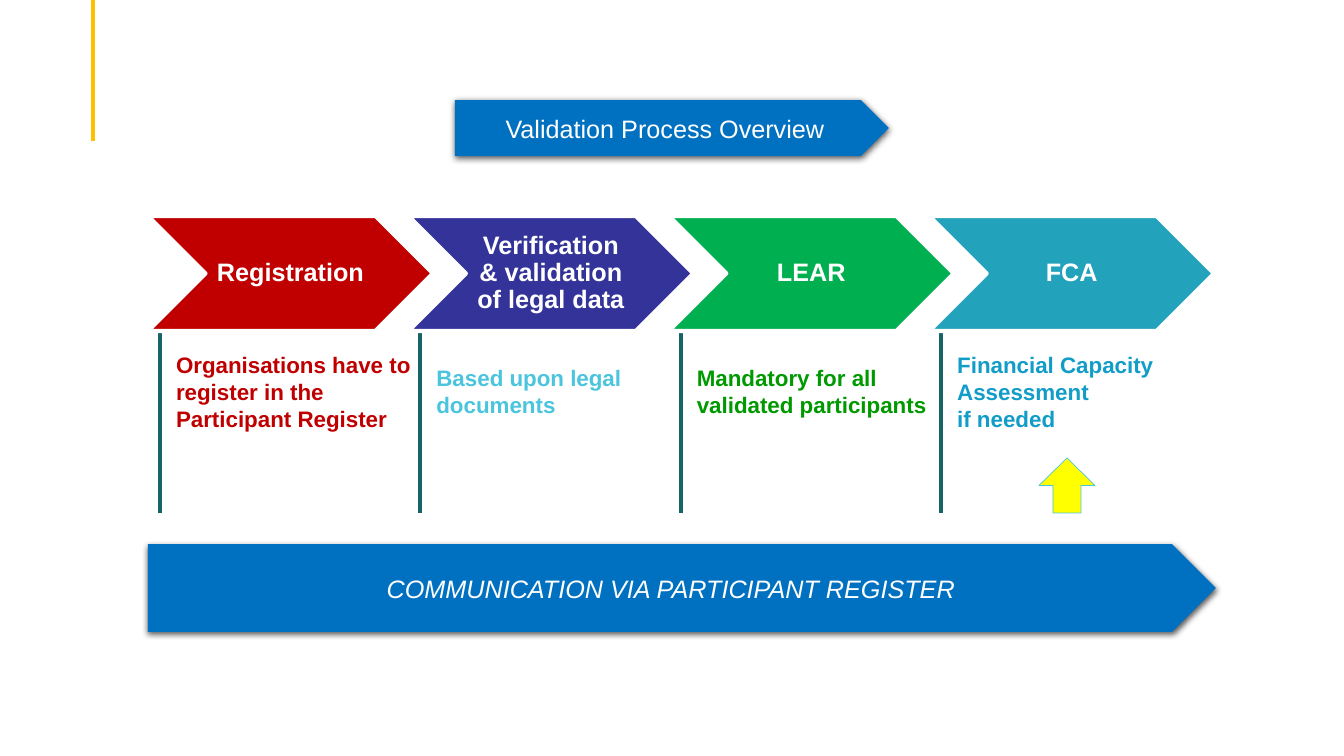
from lxml.etree import SubElement
from pptx import Presentation
from pptx.dml.color import RGBColor
from pptx.enum.shapes import MSO_CONNECTOR, MSO_SHAPE
from pptx.enum.text import MSO_ANCHOR, MSO_AUTO_SIZE, PP_ALIGN
from pptx.oxml.ns import qn
from pptx.util import Pt

COLORS = {
    "white": "FFFFFF", "gold": "FFC000", "rule": "176468", "bar": "0070C0",
    "red": "C00000", "indigo": "333399", "green": "00B050", "teal": "23A2BC",
    "sky": "4BC5DE", "leaf": "009900", "azure": "129DC8", "yellow": "FFFF00",
    "shadow": "000000",
}
STEPS = [
    ("Registration", "red", "Organisations have to register in the Participant Register", "red", 3),
    ("Verification & validation of legal data", "indigo", "Based upon legal documents", "sky", 2),
    ("LEAR", "green", "Mandatory for all validated participants", "leaf", 2),
    ("FCA", "teal", "Financial Capacity Assessment\vif needed", "azure", 3),
]
BARS = [
    ("COMMUNICATION VIA PARTICIPANT REGISTER", (148, 544, 1068, 88), {"italic": True}),
    ("Validation Process Overview", (455, 100, 434, 56), {}),
]
STEP_LEFT, STEP_PITCH, STEP_TOP, STEP_WIDTH, STEP_HEIGHT = 148, 260.4, 216, 285, 115
RULE_OFFSET, RULE_TOP, RULE_BOTTOM = 12, 331, 513
NOTE_MIDDLE, NOTE_WIDTH, NOTE_LINE, NOTE_PADDING = 392, 251, 27, 11


def px(value):
    return round(value * 914400 / 100.8)


def color(name):
    return RGBColor.from_string(COLORS[name])


def set_all(target, values):
    for name, value in values.items():
        setattr(target, name, value)


def write(shape, text, font_color, size, frame_format, paragraph_format, font_format):
    frame = shape.text_frame
    set_all(frame, {"word_wrap": True, **frame_format})
    paragraph = frame.paragraphs[0]
    paragraph.text = text
    set_all(paragraph, paragraph_format)
    for run in paragraph.runs:
        set_all(run.font, {"name": "Arial", "size": Pt(size), **font_format})
        run.font.color.rgb = color(font_color)


def add_rule(slide, x, top, bottom, line_color, width):
    rule = slide.shapes.add_connector(MSO_CONNECTOR.STRAIGHT, px(x), px(top), px(x), px(bottom))
    rule.line.color.rgb = color(line_color)
    rule.line.width = Pt(width)
    SubElement(rule._element.spPr, qn("a:effectLst"))


def add_block(slide, kind, box, fill, line=None, width=0):
    shape = slide.shapes.add_shape(kind, *map(px, box))
    shape.shadow.inherit = False
    shape.fill.solid()
    shape.fill.fore_color.rgb = color(fill)
    if line:
        shape.line.color.rgb = color(line)
        shape.line.width = Pt(width)
    else:
        shape.line.fill.background()
    return shape


def add_shadow(shape):
    effects = shape._element.spPr.find(qn("a:effectLst"))
    shadow = SubElement(effects, qn("a:outerShdw"), blurRad=str(Pt(4.5)), dist=str(Pt(1.5)),
                        dir="5400000", algn="t", rotWithShape="0")
    tint = SubElement(shadow, qn("a:srgbClr"), val=COLORS["shadow"])
    SubElement(tint, qn("a:alpha"), val="63000")


def add_note(slide, x, text, font_color, lines):
    height = lines * NOTE_LINE + NOTE_PADDING
    box = (x, NOTE_MIDDLE - height / 2, NOTE_WIDTH, height)
    note = slide.shapes.add_textbox(*map(px, box))
    write(note, text, font_color, 16,
          {"margin_left": px(16), "margin_right": 0, "auto_size": MSO_AUTO_SIZE.SHAPE_TO_FIT_TEXT},
          {"alignment": PP_ALIGN.LEFT}, {"bold": True})


def main():
    presentation = Presentation()
    set_all(presentation, {"slide_width": px(1344), "slide_height": px(756)})
    slide = presentation.slides.add_slide(presentation.slide_layouts[6])
    middle = {"vertical_anchor": MSO_ANCHOR.MIDDLE}
    centered = {"alignment": PP_ALIGN.CENTER}
    lefts = [STEP_LEFT + STEP_PITCH * index for index in range(len(STEPS))]

    add_rule(slide, 93, 0, 141, "gold", 2.25)
    for left, (_, _, note, note_color, lines) in zip(lefts, STEPS):
        add_rule(slide, left + RULE_OFFSET, RULE_TOP, RULE_BOTTOM, "rule", 3)
        add_note(slide, left + RULE_OFFSET, note, note_color, lines)
    for text, box, font_format in BARS:
        bar = add_block(slide, MSO_SHAPE.PENTAGON, box, "bar")
        add_shadow(bar)
        write(bar, text, "white", 18, middle, centered, font_format)
    for left, (title, fill, *_) in zip(lefts, STEPS):
        box = (left, STEP_TOP, STEP_WIDTH, STEP_HEIGHT)
        chevron = add_block(slide, MSO_SHAPE.CHEVRON, box, fill, "white", 3)
        write(chevron, title, "white", 18, middle, {**centered, "line_spacing": 0.9}, {"bold": True})
    add_block(slide, MSO_SHAPE.UP_ARROW, (1039, 458, 56, 55), "yellow", "sky", 0.5)
    presentation.save("out.pptx")


if __name__ == "__main__":
    main()
